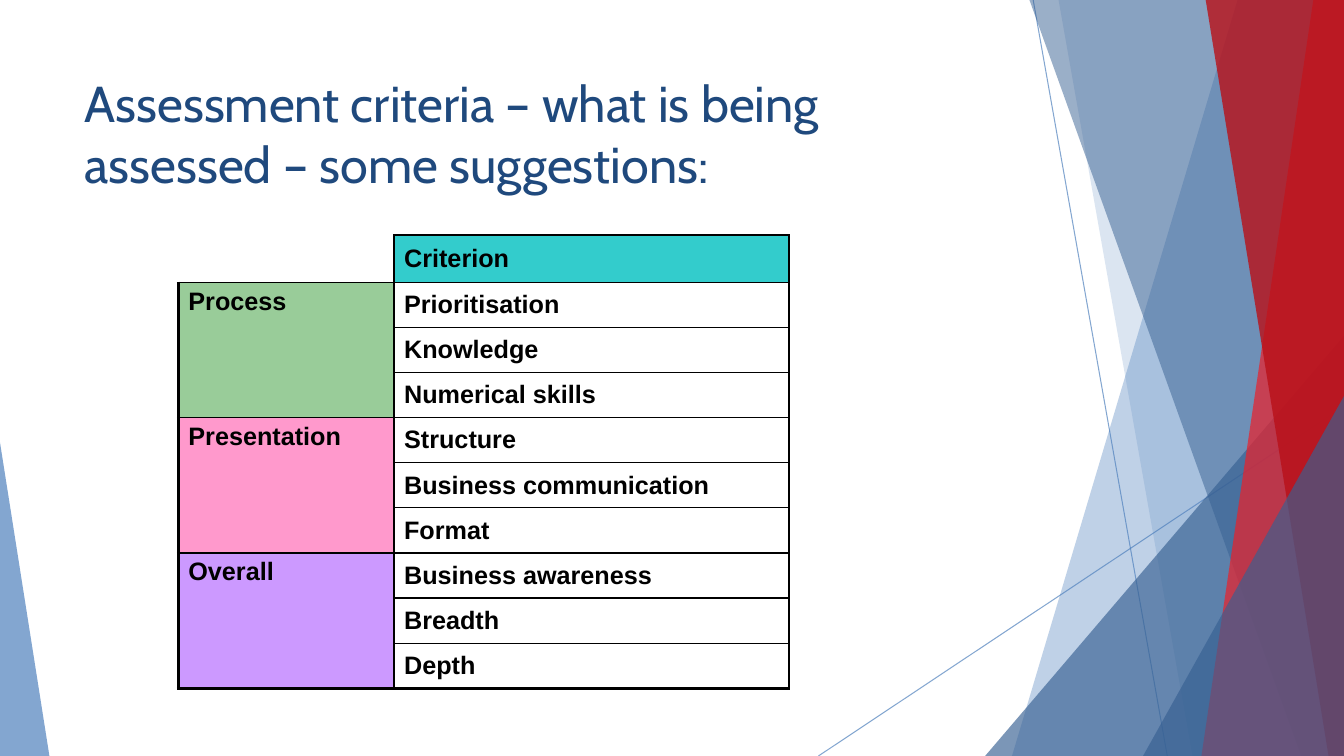
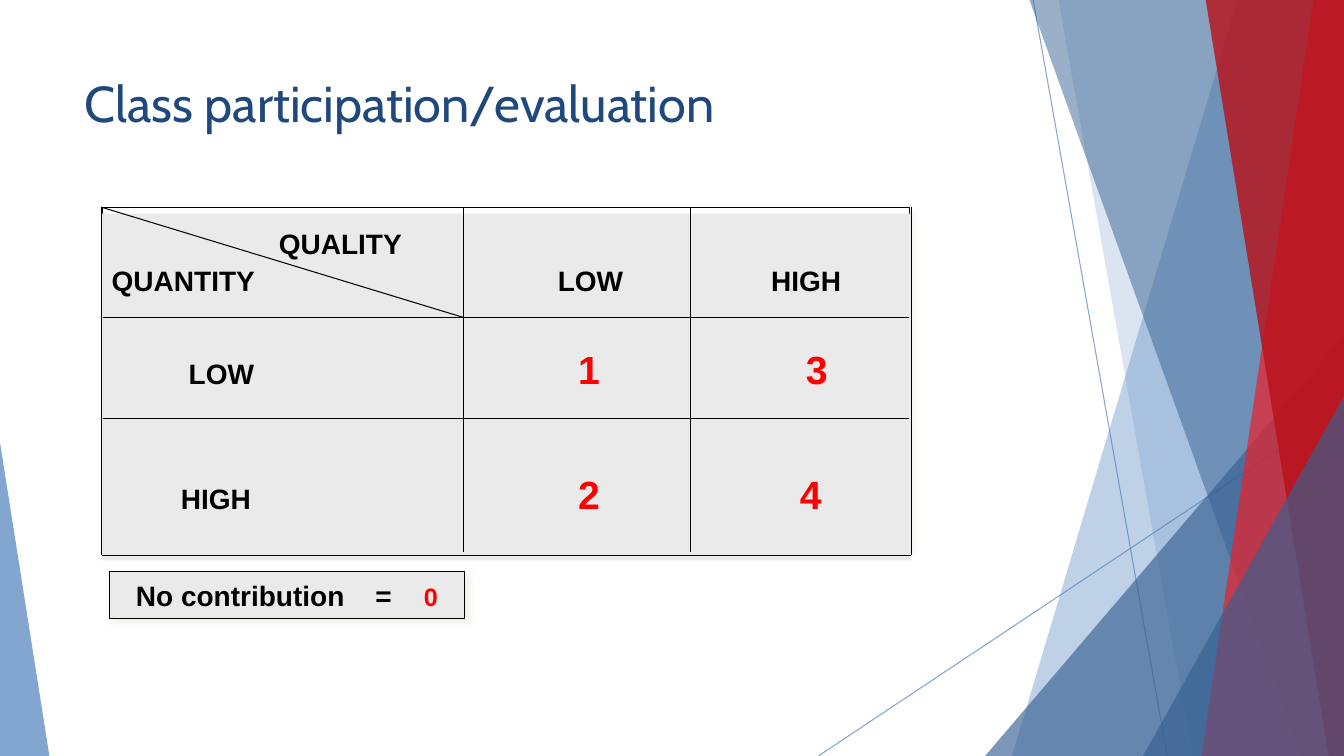
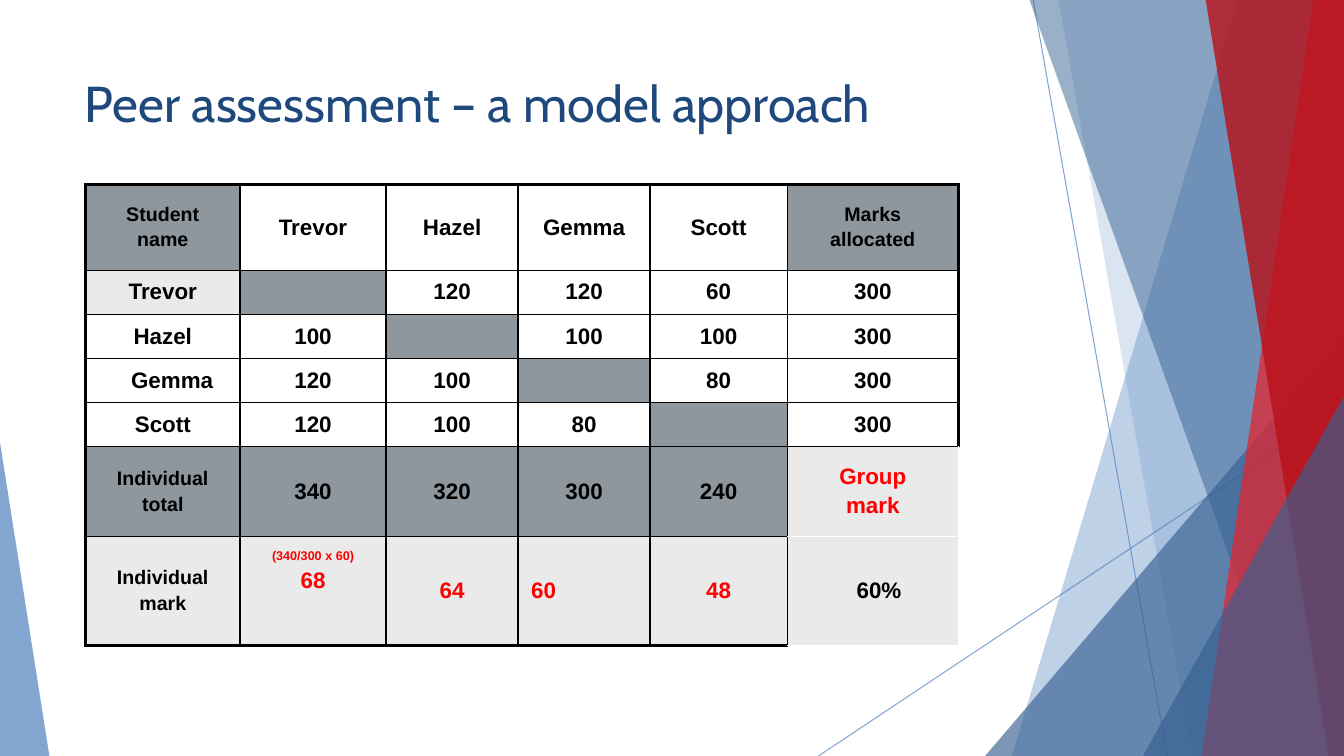
from lxml import etree
from pptx import Presentation
from pptx.dml.color import RGBColor
from pptx.enum.shapes import MSO_CONNECTOR, MSO_SHAPE
from pptx.enum.text import MSO_ANCHOR, MSO_AUTO_SIZE, PP_ALIGN
from pptx.oxml.ns import qn
from pptx.util import Pt

LEFT, CENTER = PP_ALIGN.LEFT, PP_ALIGN.CENTER
TOP, MIDDLE = MSO_ANCHOR.TOP, MSO_ANCHOR.MIDDLE
STRAIGHT = MSO_CONNECTOR.STRAIGHT
RECTANGLE, TRIANGLE = MSO_SHAPE.RECTANGLE, MSO_SHAPE.ISOSCELES_TRIANGLE

WIDTH, HEIGHT = 960, 540
BLACK, WHITE, SCORE_RED = "000000", "FFFFFF", "FF0000"
BLUE, DEEP_BLUE, TITLE_BLUE = "4F81BD", "376092", "1F497D"
BRIGHT_RED, DARK_RED = "EC1F29", "B91018"
GREY, LIGHT_GREY, SHADOW = "8E979E", "EAEAEA", "EEECE1"
THIN, HEAVY, PALE = (BLACK, 1), (BLACK, 2.25), (WHITE, 1)

CRITERIA = [
    ("Process", "99CC99", ["Prioritisation", "Knowledge", "Numerical skills"]),
    ("Presentation", "FF99CC", ["Structure", "Business communication", "Format"]),
    ("Overall", "CC99FF", ["Business awareness", "Breadth", "Depth"]),
]
PEER_MARKS = [
    ["Student\nname", "Trevor", "Hazel", "Gemma", "Scott", "Marks\nallocated"],
    ["Trevor", "", "120", "120", "60", "300"],
    ["Hazel", "100", "", "100", "100", "300"],
    ["Gemma", "120", "100", "", "80", "300"],
    ["Scott", "120", "100", "80", "", "300"],
    ["Individual\ntotal", "340", "320", "300", "240", "Group\nmark"],
    ["Individual\nmark", "(340/300 x 60)\n68", "64", "60", "48", "60%"],
]


def rgb(value):
    """Return the colour for a hex string."""
    return RGBColor.from_string(value)


def set_font(font, size, colour, name="Arial", bold=True):
    """Format a paragraph or run font."""
    font.name, font.size, font.bold = name, Pt(size), bold
    font.color.rgb = rgb(colour)


def set_alpha(shape, percent):
    """Make the colours of a shape partly transparent."""
    for colour in shape.element.iter(qn("a:srgbClr")):
        etree.SubElement(colour, qn("a:alpha"), val=str(percent * 1000))


def add_line(slide, start, end, colour=BLACK):
    """Draw a thin straight line between two points."""
    line = slide.shapes.add_connector(STRAIGHT, *map(Pt, start + end))
    line.line.color.rgb = rgb(colour)
    line.line.width = Pt(0.75)
    etree.SubElement(line.element.spPr, qn("a:effectLst"))
    return line


def paint(shape, fill, outline=None):
    """Give a shape a flat fill and an optional thin outline."""
    shape.shadow.inherit = False
    shape.fill.solid()
    shape.fill.fore_color.rgb = rgb(fill)
    if outline:
        shape.line.color.rgb = rgb(outline)
        shape.line.width = Pt(0.75)
    else:
        shape.line.fill.background()


def add_rectangle(slide, place, fill, outline=None):
    """Draw a rectangle at left, top, width, height."""
    box = slide.shapes.add_shape(RECTANGLE, *map(Pt, place))
    paint(box, fill, outline)
    return box


def add_shadow(shape):
    """Add the soft shadow of the evaluation boxes."""
    effects = shape.element.spPr.find(qn("a:effectLst"))
    shadow = etree.SubElement(effects, qn("a:outerShdw"), blurRad=str(Pt(5)),
                              dist=str(Pt(3)), dir=str(45 * 60000))
    colour = etree.SubElement(shadow, qn("a:srgbClr"), val=SHADOW)
    etree.SubElement(colour, qn("a:alpha"), val="75000")


def add_band(slide, top_x, bottom_x, colour, alpha):
    """Draw a slanted band that reaches the right edge of the slide."""
    builder = slide.shapes.build_freeform(Pt(top_x), Pt(-0.7))
    corners = [(WIDTH, -0.7), (WIDTH, HEIGHT), (bottom_x, HEIGHT)]
    builder.add_line_segments([(Pt(x), Pt(y)) for x, y in corners])
    band = builder.convert_to_shape()
    paint(band, colour)
    set_alpha(band, alpha)


def add_triangle(slide, place, apex, colour, alpha):
    """Draw a triangle whose apex is at the given share of its width."""
    triangle = slide.shapes.add_shape(TRIANGLE, *map(Pt, place))
    triangle.adjustments[0] = apex
    paint(triangle, colour)
    set_alpha(triangle, alpha)


def draw_backdrop(slide):
    """Draw the lines, bands and triangles that all slides share."""
    for start, end in [((738, 0), (833.8, HEIGHT)), ((WIDTH, 290.2), (584.6, HEIGHT))]:
        set_alpha(add_line(slide, start, end, BLUE), 70)
    add_band(slide, 884.2, 722.9, BLUE, 36)
    add_band(slide, 756, 851.8, BLUE, 20)
    add_triangle(slide, (703.7, 239.8, 256.3, 300.2), 1, DEEP_BLUE, 66)
    add_band(slide, 735.1, 929.5, DEEP_BLUE, 50)
    add_band(slide, 938.2, 858.2, BRIGHT_RED, 70)
    add_band(slide, 861.1, 949, DARK_RED, 80)
    add_triangle(slide, (816.5, 283, 143.5, 257), 1, DEEP_BLUE, 66)
    add_triangle(slide, (0, 316.1, 35.3, 223.9), 0, BLUE, 70)


def prepare_layout(layout):
    """Place the layout title and drop its footer placeholders."""
    for holder in list(layout.placeholders):
        if holder.placeholder_format.idx:
            layout.shapes.element.remove(holder.element)
        else:
            holder.left, holder.top = Pt(53.3), Pt(48.2)
            holder.width, holder.height = Pt(676.8), Pt(103.7)


def move_to_layout(slide):
    """Move all drawn shapes of a slide to its layout."""
    for shape in list(slide.shapes):
        if not shape.is_placeholder:
            slide.slide_layout.shapes.element.append(shape.element)


def add_slide(deck, layout, title):
    """Add a slide with a formatted title."""
    slide = deck.slides.add_slide(layout)
    frame = slide.shapes.title.text_frame
    frame.text = title
    frame.auto_size, frame.vertical_anchor = MSO_AUTO_SIZE.NONE, TOP
    para = frame.paragraphs[0]
    para.alignment = LEFT
    set_font(para.font, 36, TITLE_BLUE, "Cabin", False)
    return slide


def write_tabbed(para, spans, tabs, space=0):
    """Write spans of text, size and colour on a line with tab stops."""
    stops = etree.SubElement(para._p.get_or_add_pPr(), qn("a:tabLst"))
    for position, kind in tabs:
        etree.SubElement(stops, qn("a:tab"), pos=str(Pt(position)), algn=kind)
    para.alignment, para.space_before = LEFT, Pt(space)
    set_font(para.font, *spans[0][1:])
    for text, size, colour in spans:
        span = para.add_run()
        span.text = text
        if (size, colour) != spans[0][1:]:
            set_font(span.font, size, colour)


def add_table(slide, left, top, widths, heights):
    """Add an unbanded table with the given column and row sizes."""
    frame = slide.shapes.add_table(len(heights), len(widths), Pt(left), Pt(top),
                                   Pt(sum(widths)), Pt(sum(heights)))
    table = frame.table
    table.first_row = table.horz_banding = False
    for column, width in zip(table.columns, widths):
        column.width = Pt(width)
    for row, height in zip(table.rows, heights):
        row.height = Pt(height)
    return table


def set_borders(cell, left=THIN, right=THIN, top=THIN, bottom=THIN):
    """Set the four cell borders as colour and width, or None for no line."""
    properties = cell._tc.get_or_add_tcPr()
    for index, (side, border) in enumerate(zip("LRTB", (left, right, top, bottom))):
        line = etree.Element(qn(f"a:ln{side}"))
        if border:
            line.set("w", str(Pt(border[1])))
            fill = etree.SubElement(line, qn("a:solidFill"))
            etree.SubElement(fill, qn("a:srgbClr"), val=border[0])
        else:
            etree.SubElement(line, qn("a:noFill"))
        properties.insert(index, line)


def write_cell(cell, text, size, fill=None, colour=BLACK, align=LEFT, anchor=MIDDLE):
    """Fill a cell and write its lines as paragraphs."""
    if fill:
        cell.fill.solid()
        cell.fill.fore_color.rgb = rgb(fill)
    else:
        cell.fill.background()
    cell.vertical_anchor = anchor
    cell.text = text
    for index, para in enumerate(cell.text_frame.paragraphs):
        para.alignment = align
        para.space_before = Pt(2.5 if index else 0)
        set_font(para.font, size, colour)


def draw_criteria(slide):
    """Draw the table of assessment criteria."""
    table = add_table(slide, 127.4, 167.8, [154.1, 282.2], [33.8] + [32.25] * 9)
    write_cell(table.cell(0, 0), "", 18)
    set_borders(table.cell(0, 0), left=None, top=None)
    write_cell(table.cell(0, 1), "Criterion", 18, "33CCCC")
    set_borders(table.cell(0, 1), right=HEAVY)
    for group, (name, fill, criteria) in enumerate(CRITERIA):
        first = 1 + group * len(criteria)
        final = group == len(CRITERIA) - 1
        for row, criterion in enumerate(criteria, first):
            last = final and criterion == criteria[-1]
            write_cell(table.cell(row, 1), criterion, 18)
            set_borders(table.cell(row, 1), right=HEAVY, bottom=HEAVY if last else THIN)
            set_borders(table.cell(row, 0), left=HEAVY, bottom=HEAVY if final else THIN)
        table.cell(first, 0).merge(table.cell(first + len(criteria) - 1, 0))
        write_cell(table.cell(first, 0), name, 18, fill, anchor=TOP)


def draw_evaluation(slide):
    """Draw the participation grid and the note below it."""
    note = add_rectangle(slide, (78.5, 408.2, 253.4, 33.8), LIGHT_GREY, BLACK)
    add_shadow(note)
    frame = note.text_frame
    frame.word_wrap, frame.vertical_anchor = True, MIDDLE
    frame.margin_left = Pt(18.6)
    write_tabbed(frame.paragraphs[0],
                 [("No contribution\t=\t", 20, BLACK), ("0", 18, SCORE_RED)],
                 [(171, "l"), (205.7, "l")])

    add_shadow(add_rectangle(slide, (73.4, 148.3, 576, 246.2), WHITE, BLACK))
    grid = add_rectangle(slide, (72.7, 152.6, 578.2, 247.7), LIGHT_GREY)
    frame = grid.text_frame
    frame.word_wrap, frame.vertical_anchor = True, TOP
    frame.margin_top = Pt(9.3)
    lines = [
        ([("\tQUALITY", 20, BLACK)], [(119.4, "l")], 0),
        ([("QUANTITY\tLOW\tHIGH", 20, BLACK)], [(342, "ctr"), (496, "ctr")], 2),
        ([("\tLOW", 20, BLACK), ("\t1\t3", 28, SCORE_RED)],
         [(55, "l"), (341, "ctr"), (503.6, "ctr")], 34.7),
        ([("\tHIGH", 20, BLACK), ("\t2\t4", 28, SCORE_RED)],
         [(49.4, "l"), (341, "ctr"), (499.3, "ctr")], 55.6),
    ]
    for index, (spans, tabs, space) in enumerate(lines):
        para = frame.add_paragraph() if index else frame.paragraphs[0]
        write_tabbed(para, spans, tabs, space)

    for x in (331.2, 493.2):
        add_line(slide, (x, 148.3), (x, 394.5))
    for y in (298.8, 226.8):
        add_line(slide, (73.4, y), (649.4, y))
    add_line(slide, (73.4, 148.3), (331.2, 226.8))
    for x in (72.7, 650.9):
        add_line(slide, (x, 147.6), (x, 396.7))
    add_line(slide, (72.7, 396.7), (650.9, 396.7))


def peer_fill(row, column):
    """Return the fill of a peer mark cell, or None."""
    if (row, column) in [(1, 0), (5, 5)] or row == 6:
        return LIGHT_GREY
    if row == column or row == 5 or (row, column) == (0, 5):
        return GREY
    return None


def draw_peer_marks(slide):
    """Draw the table of marks that students give each other."""
    table = add_table(slide, 61.2, 131.8, [110.2, 104.4, 94.3, 94.3, 97.9, 122.4],
                      [61.2] + [31.5] * 4 + [64.1, 77.8])
    for row, texts in enumerate(PEER_MARKS):
        for column, text in enumerate(texts):
            cell = table.cell(row, column)
            group_mark = row >= 5 and column == 5
            red = (row, column) == (5, 5) or (row == 6 and 1 <= column <= 4)
            size = 14 if "\n" in text and not red else 16
            write_cell(cell, text, size, peer_fill(row, column),
                       SCORE_RED if red else BLACK, CENTER)
            set_borders(
                cell,
                left=HEAVY if column == 0 else THIN,
                right=PALE if group_mark else HEAVY if column == 5 else THIN,
                top=HEAVY if row == 0 else PALE if group_mark and row == 6 else THIN,
                bottom=PALE if group_mark else HEAVY if row == 6 else THIN)
    table.cell(3, 0).margin_left = Pt(20.5)
    table.cell(6, 5).margin_left = Pt(16)
    table.cell(6, 3).margin_left = Pt(9.3)
    table.cell(6, 3).text_frame.paragraphs[0].alignment = LEFT
    worked = table.cell(6, 1)
    worked.vertical_anchor, worked.margin_top = TOP, Pt(9)
    formula, result = worked.text_frame.paragraphs
    formula.font.size = Pt(9)
    result.space_before = Pt(4)


def main():
    """Build and save the deck."""
    deck = Presentation()
    deck.slide_width, deck.slide_height = Pt(WIDTH), Pt(HEIGHT)
    layout = deck.slide_layouts[5]
    prepare_layout(layout)
    slide = add_slide(deck, layout,
                      "Assessment criteria – what is being assessed – some suggestions:")
    draw_backdrop(slide)
    move_to_layout(slide)
    draw_criteria(slide)
    draw_evaluation(add_slide(deck, layout, "Class participation/evaluation"))
    draw_peer_marks(add_slide(deck, layout, "Peer assessment – a model approach"))
    deck.save("out.pptx")


if __name__ == "__main__":
    main()
